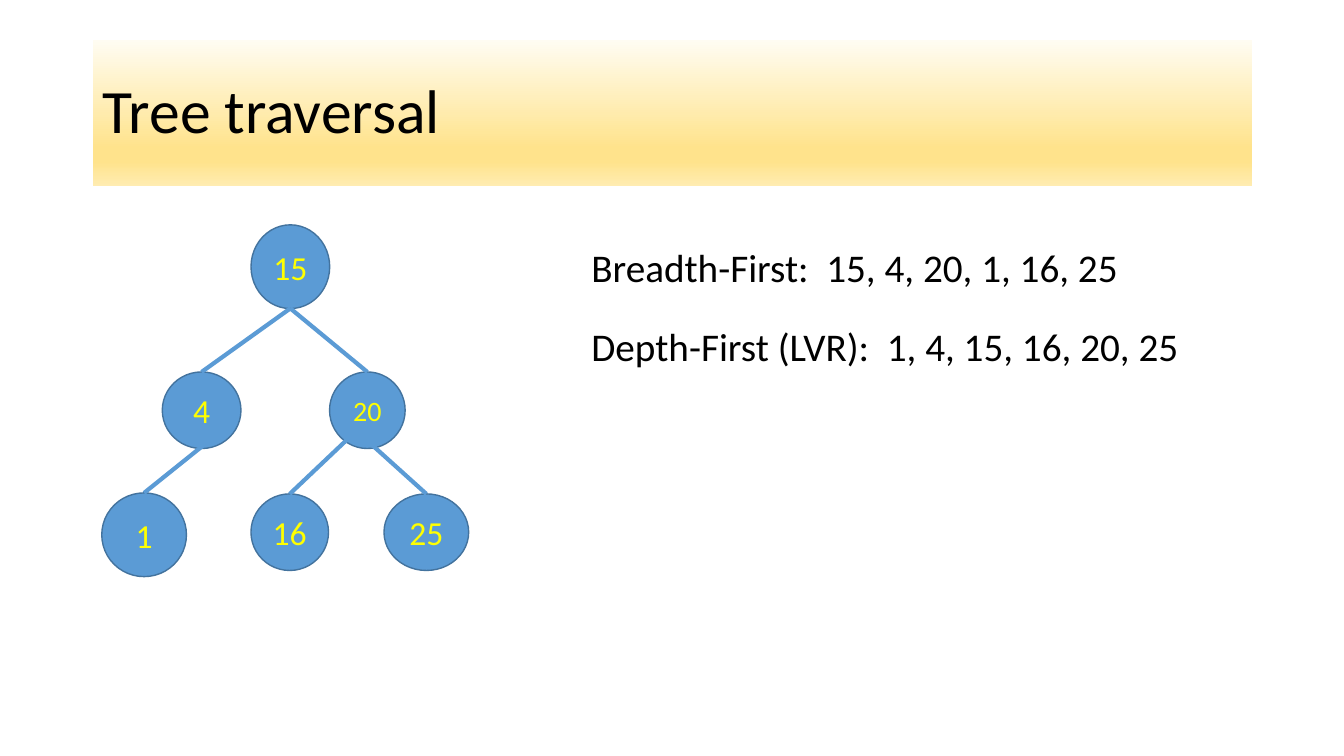
"""Build a slide comparing breadth-first and depth-first traversal of a binary tree."""
from copy import deepcopy

from lxml import etree
from pptx import Presentation
from pptx.dml.color import RGBColor
from pptx.enum import shapes, text
from pptx.oxml.ns import qn
from pptx.util import Pt

BLACK = RGBColor(0x00, 0x00, 0x00)
YELLOW = RGBColor(0xFF, 0xFF, 0x00)
NODE_BLUE = RGBColor(0x5B, 0x9B, 0xD5)
OUTLINE_BLUE = RGBColor(0x43, 0x73, 0x9E)
BANNER_STOPS = [
    (0, RGBColor(0xFF, 0xFC, 0xF2)),
    (0.74, RGBColor(0xFF, 0xE3, 0x8C)),
    (0.83, RGBColor(0xFF, 0xE3, 0x8C)),
    (1, RGBColor(0xFF, 0xEC, 0xB2)),
]
NODES = [
    ("15", 179.3, 160.6, 56.2, 59.8, 24),
    ("4", 115.9, 265.7, 56.2, 54.7, 24),
    ("20", 235.4, 265.7, 54, 54.7, 20),
    ("25", 274.3, 352.8, 60.5, 54.7, 24),
    ("1", 72.7, 352.1, 60.5, 59.8, 24),
    ("16", 179.3, 352.8, 55.4, 54.7, 24),
]
EDGES = [
    ("4", 207.4, 220.3),
    ("20", 207.4, 220.3),
    ("25", 253.4, 306.7),
    ("1", 154.1, 311),
    ("16", 254.9, 307.4),
]
TRAVERSALS = [
    ("Breadth-First:  15, 4, 20, 1, 16, 25", 169.9, 396),
    ("Depth-First (LVR):  1, 4, 15, 16, 20, 25", 226.8, 440),
]


def write(shape, wording, size, color, alignment=text.PP_ALIGN.LEFT):
    paragraph = shape.text_frame.paragraphs[0]
    paragraph.text = wording
    paragraph.alignment = alignment
    paragraph.font.name = "Calibri"
    paragraph.font.size = Pt(size)
    paragraph.font.color.rgb = color
    return paragraph


presentation = Presentation()
presentation.slide_width = Pt(960)
presentation.slide_height = Pt(540)
slide = presentation.slides.add_slide(presentation.slide_layouts[6])

banner = slide.shapes.add_textbox(Pt(66.2), Pt(28.8), Pt(828), Pt(104.4))
banner.text_frame.word_wrap = True
banner.text_frame.vertical_anchor = text.MSO_ANCHOR.MIDDLE
write(banner, "Tree traversal", 44, BLACK).line_spacing = 0.9
banner.fill.gradient()
banner.fill.gradient_angle = 270
stop_list = banner.element.spPr.find(".//" + qn("a:gsLst"))
stop_list.extend([deepcopy(stop) for stop in stop_list])
for stop, (position, color) in zip(banner.fill.gradient_stops, BANNER_STOPS):
    stop.position = position
    stop.color.rgb = color

nodes = {}
for label, left, top, width, height, size in NODES:
    node = slide.shapes.add_shape(
        shapes.MSO_SHAPE.OVAL, Pt(left), Pt(top), Pt(width), Pt(height))
    node.shadow.inherit = False
    node.fill.solid()
    node.fill.fore_color.rgb = NODE_BLUE
    node.line.color.rgb = OUTLINE_BLUE
    node.line.width = Pt(1)
    node.text_frame.word_wrap = False
    node.text_frame.vertical_anchor = text.MSO_ANCHOR.MIDDLE
    write(node, label, size, YELLOW, text.PP_ALIGN.CENTER)
    nodes[label] = node

for child, left, top in EDGES:
    edge = slide.shapes.add_connector(
        shapes.MSO_CONNECTOR.STRAIGHT, Pt(left), Pt(top), Pt(left), Pt(top))
    edge.end_connect(nodes[child], 0)
    edge.line.color.rgb = NODE_BLUE
    edge.line.width = Pt(3)
    etree.SubElement(edge.element.spPr, qn("a:effectLst"))

for wording, top, width in TRAVERSALS:
    box = slide.shapes.add_textbox(Pt(415.4), Pt(top), Pt(width), Pt(41))
    box.text_frame.word_wrap = False
    box.text_frame.auto_size = text.MSO_AUTO_SIZE.SHAPE_TO_FIT_TEXT
    write(box, wording, 28, BLACK)

presentation.save("out.pptx")
